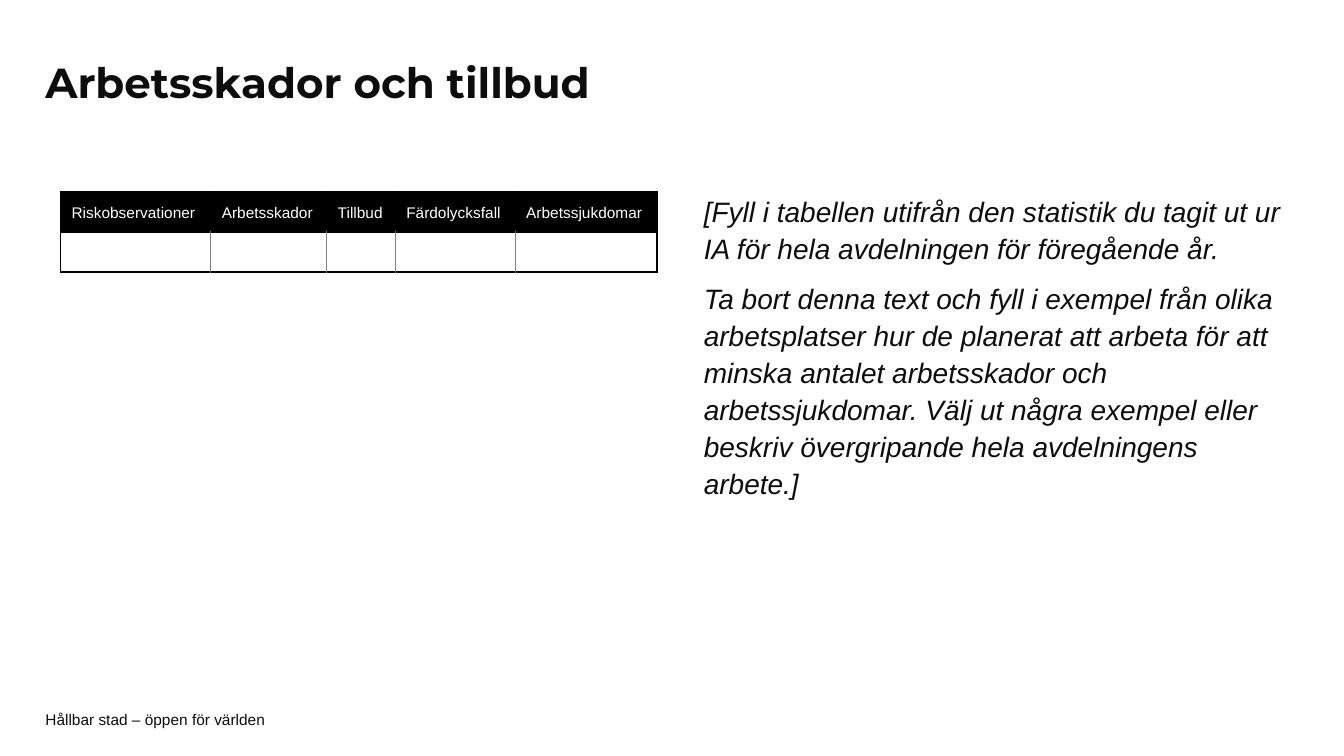
from lxml.etree import SubElement
from pptx import Presentation
from pptx.dml.color import RGBColor
from pptx.enum.text import MSO_ANCHOR
from pptx.oxml.ns import qn
from pptx.util import Pt

PX = 9144
SLIDE_SIZE = (1333, 750)
INK, BLACK, GRAY, WHITE = "0D0D0D", "000000", "808080", "FFFFFF"

TITLE = "Arbetsskador och tillbud"
FOOTER = "Hållbar stad – öppen för världen"
INSTRUCTIONS = [
    "[Fyll i tabellen utifrån den statistik du tagit ut ur IA för hela avdelningen för föregående år.",
    "Ta bort denna text och fyll i exempel från olika arbetsplatser hur de planerat att arbeta för att "
    "minska antalet arbetsskador och arbetssjukdomar. Välj ut några exempel eller beskriv övergripande "
    "hela avdelningens arbete.]",
]
COLUMNS = [
    ("Riskobservationer", 149),
    ("Arbetsskador", 115),
    ("Tillbud", 68),
    ("Färdolycksfall", 119),
    ("Arbetssjukdomar", 141),
]
ROW_HEIGHT = 40

TITLE_BOX = (45, 44, 1003, 81)
FOOTER_BOX = (45, 706, 945, 16)
INSTRUCTIONS_BOX = (698, 190, 591, 457)
TABLE_CORNER = (60, 190)

TITLE_FONT = {"name": "Montserrat", "size": Pt(30), "bold": True}
FOOTER_FONT = {"name": "Arial", "size": Pt(11)}
INSTRUCTIONS_FONT = {"name": "Arial", "size": Pt(20), "italic": True}
HEADER_FONT = {"name": "Arial", "size": Pt(11), "bold": False}


def px(*lengths):
    return [length * PX for length in lengths]


def color(value):
    return RGBColor.from_string(value)


def set_all(target, values):
    for name, value in values.items():
        setattr(target, name, value)


def write(frame, texts, font, ink=INK, spacing=1, before=0, after=0):
    for index, text in enumerate(texts):
        paragraph = frame.add_paragraph() if index else frame.paragraphs[0]
        set_all(paragraph, {
            "line_spacing": spacing,
            "space_before": Pt(before if index else 0),
            "space_after": Pt(after),
        })
        run = paragraph.add_run()
        run.text = text
        set_all(run.font, font)
        run.font.color.rgb = color(ink)


def set_margins(target, left, top, right, bottom):
    names = ("margin_left", "margin_top", "margin_right", "margin_bottom")
    set_all(target, dict(zip(names, px(left, top, right, bottom))))


def add_text(slide, box, texts, font, anchor, **spacing):
    frame = slide.shapes.add_textbox(*px(*box)).text_frame
    frame.word_wrap = True
    frame.vertical_anchor = anchor
    set_margins(frame, 0, 0, 0, 0)
    write(frame, texts, font, **spacing)


def set_borders(cell, borders):
    properties = cell._tc.get_or_add_tcPr()
    for side, (ink, width) in borders.items():
        line = SubElement(properties, qn(f"a:ln{side}"), w=str(Pt(width)))
        fill = SubElement(line, qn("a:solidFill"))
        SubElement(fill, qn("a:srgbClr"), val=ink)


def add_statistics(slide):
    widths = [width for _, width in COLUMNS]
    size = (sum(widths), 2 * ROW_HEIGHT)
    table = slide.shapes.add_table(2, len(COLUMNS), *px(*TABLE_CORNER, *size)).table
    table.horz_banding = False
    outer, inner = (BLACK, 1.5), (GRAY, 0.5)
    last = len(COLUMNS) - 1
    for index, (heading, width) in enumerate(COLUMNS):
        table.columns[index].width = width * PX
        header, value = table.cell(0, index), table.cell(1, index)
        set_borders(header, {side: outer for side in "LRTB"})
        set_borders(value, {
            "L": inner if index else outer,
            "R": inner if index < last else outer,
            "T": outer,
            "B": outer,
        })
        header.fill.solid()
        header.fill.fore_color.rgb = color(BLACK)
        value.fill.background()
        header.vertical_anchor = MSO_ANCHOR.MIDDLE
        set_margins(header, 11, 8, 2, 8)
        write(header.text_frame, [heading], HEADER_FONT, WHITE, spacing=1.15, after=8)


def main():
    presentation = Presentation()
    presentation.slide_width, presentation.slide_height = px(*SLIDE_SIZE)
    slide = presentation.slides.add_slide(presentation.slide_layouts[5])

    title = slide.shapes.title
    set_all(title, dict(zip(("left", "top", "width", "height"), px(*TITLE_BOX))))
    title.text_frame.vertical_anchor = MSO_ANCHOR.MIDDLE
    set_margins(title.text_frame, 0, 5, 0, 5)
    write(title.text_frame, [TITLE], TITLE_FONT, spacing=0.9)
    title.text_frame.paragraphs[0].alignment = 1

    add_text(slide, FOOTER_BOX, [FOOTER], FOOTER_FONT, MSO_ANCHOR.MIDDLE)
    add_text(slide, INSTRUCTIONS_BOX, INSTRUCTIONS, INSTRUCTIONS_FONT, MSO_ANCHOR.TOP,
             spacing=1.1, before=6, after=3)
    add_statistics(slide)
    presentation.save("out.pptx")


if __name__ == "__main__":
    main()
